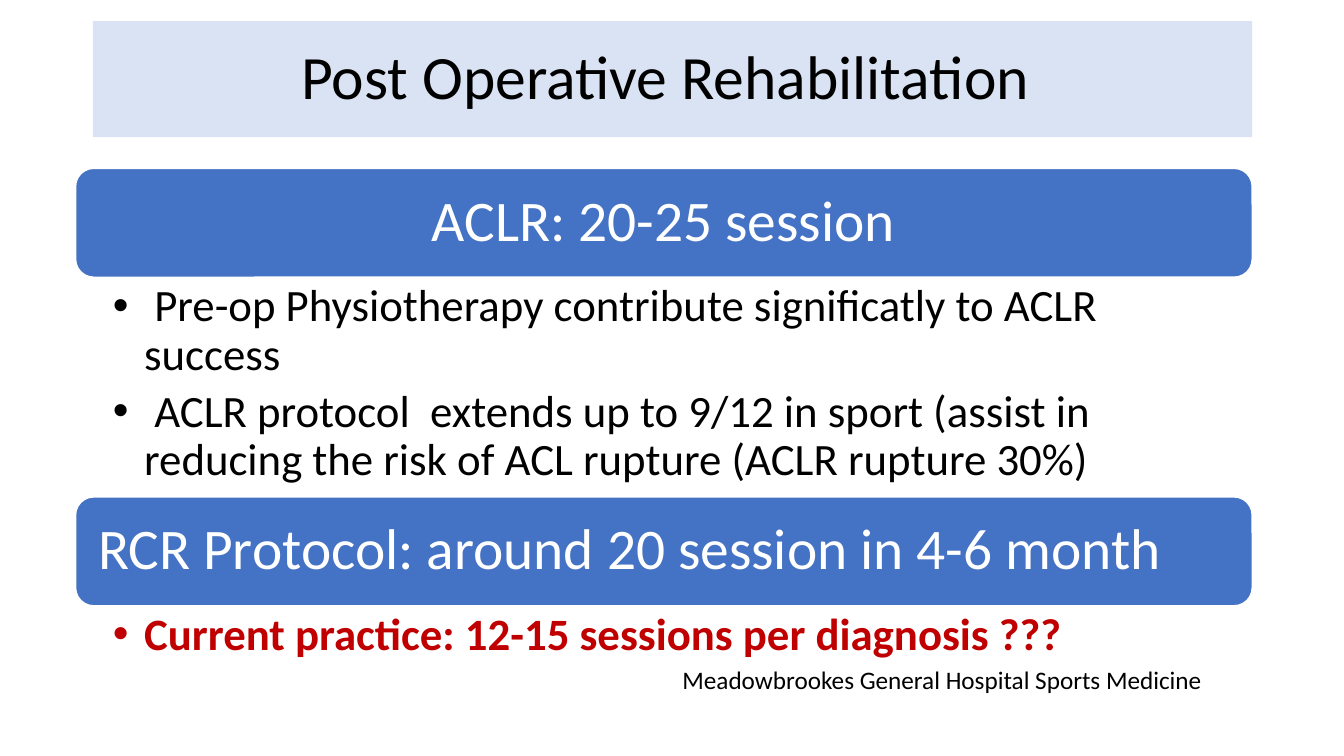
import pptx
import pptx.dml.color
import pptx.enum.shapes
import pptx.enum.text
import pptx.util
from dataclasses import dataclass
from lxml import etree

Inches = pptx.util.Inches
ALIGN = pptx.enum.text.PP_ALIGN
ANCHOR = pptx.enum.text.MSO_ANCHOR

# Content
TITLE = "Post Operative Rehabilitation "
SECTIONS = [
    {"heading": "ACLR: 20-25 session", "align": ALIGN.CENTER, "list_height": 2.18,
     "points": [" Pre-op Physiotherapy contribute significatly to ACLR success",
                " ACLR protocol  extends up to 9/12 in sport (assist in reducing "
                "the risk of ACL rupture (ACLR rupture 30%)"],
     "alert": False},
    {"heading": "RCR Protocol: around 20 session in 4-6 month", "align": ALIGN.LEFT,
     "list_height": 0.74,
     "points": ["Current practice: 12-15 sessions per diagnosis ???"],
     "alert": True},
]
CREDIT = "Meadowbrookes General Hospital Sports Medicine"


@dataclass(frozen=True)
class Theme:
    font: str = "Calibri"
    title_fill: str = "DAE3F3"
    band: str = "4472C4"
    light: str = "FFFFFF"
    dark: str = "000000"
    alert: str = "C00000"
    title_size: int = 44
    heading_size: int = 41
    list_size: int = 32
    credit_size: int = 18


THEME = Theme()

# Layout, in inches
LEFT, WIDTH, FIRST_TOP = 0.75, 11.67, 1.67
BAND_HEIGHT, BULLET_INDENT = 1.08, 0.31


def rgb(value):
    return pptx.dml.color.RGBColor.from_string(value)


def place(shape, left, top, width, height):
    shape.left, shape.top = Inches(left), Inches(top)
    shape.width, shape.height = Inches(width), Inches(height)


def write(shape, lines, *, size, color=THEME.dark, bold=False, align=ALIGN.LEFT,
          anchor=ANCHOR.TOP, insets=(0.1, 0.05, 0.1, 0.05), spacing=0.9,
          after=0, bullets=False):
    frame = shape.text_frame
    frame.word_wrap = True
    frame.auto_size = pptx.enum.text.MSO_AUTO_SIZE.NONE
    frame.vertical_anchor = anchor
    (frame.margin_left, frame.margin_top,
     frame.margin_right, frame.margin_bottom) = map(Inches, insets)
    for index, line in enumerate(lines):
        para = frame.add_paragraph() if index else frame.paragraphs[0]
        para.alignment, para.line_spacing = align, spacing
        para.space_before, para.space_after = pptx.util.Pt(0), pptx.util.Pt(after)
        if bullets:
            props = para._p.get_or_add_pPr()
            props.set("marL", str(Inches(BULLET_INDENT)))
            props.set("indent", str(-Inches(BULLET_INDENT)))
            bullet = etree.SubElement(props, pptx.oxml.ns.qn("a:buChar"))
            bullet.set("char", "•")
        span = para.add_run()
        span.text = line
        span.font.name, span.font.size = THEME.font, pptx.util.Pt(size)
        span.font.bold, span.font.color.rgb = bold, rgb(color)


deck = pptx.Presentation()
deck.slide_width, deck.slide_height = Inches(13.33), Inches(7.5)
page = deck.slides.add_slide(deck.slide_layouts.get_by_name("Two Content"))
title, *list_boxes = page.placeholders

# Title
place(title, 0.92, 0.21, 11.5, 1.15)
title.fill.solid()
title.fill.fore_color.rgb = rgb(THEME.title_fill)
write(title, [TITLE], size=THEME.title_size, align=ALIGN.CENTER, anchor=ANCHOR.MIDDLE)

# Heading bands, each with its list below
top = FIRST_TOP
for section, list_box in zip(SECTIONS, list_boxes):
    band = page.shapes.add_shape(
        pptx.enum.shapes.MSO_SHAPE.ROUNDED_RECTANGLE,
        Inches(LEFT), Inches(top), Inches(WIDTH), Inches(BAND_HEIGHT))
    band.shadow.inherit = False
    band.fill.solid()
    band.fill.fore_color.rgb = rgb(THEME.band)
    band.line.color.rgb = rgb(THEME.light)
    band.line.width = pptx.util.Pt(1)
    write(band, [section["heading"]], size=THEME.heading_size, color=THEME.light,
          align=section["align"], anchor=ANCHOR.MIDDLE, insets=(0.17, 0.17, 0.17, 0.17))
    top += BAND_HEIGHT

    place(list_box, LEFT, top, WIDTH, section["list_height"])
    write(list_box, section["points"], size=THEME.list_size, bold=section["alert"],
          color=THEME.alert if section["alert"] else THEME.dark,
          insets=(0.37, 0.06, 0.32, 0.06), after=6, bullets=True)
    top += section["list_height"]

# Credit line
credit = page.shapes.add_textbox(Inches(6.67), Inches(6.54), Inches(6.3), Inches(0.71))
write(credit, [CREDIT], size=THEME.credit_size, spacing=1.0)

deck.save("out.pptx")
